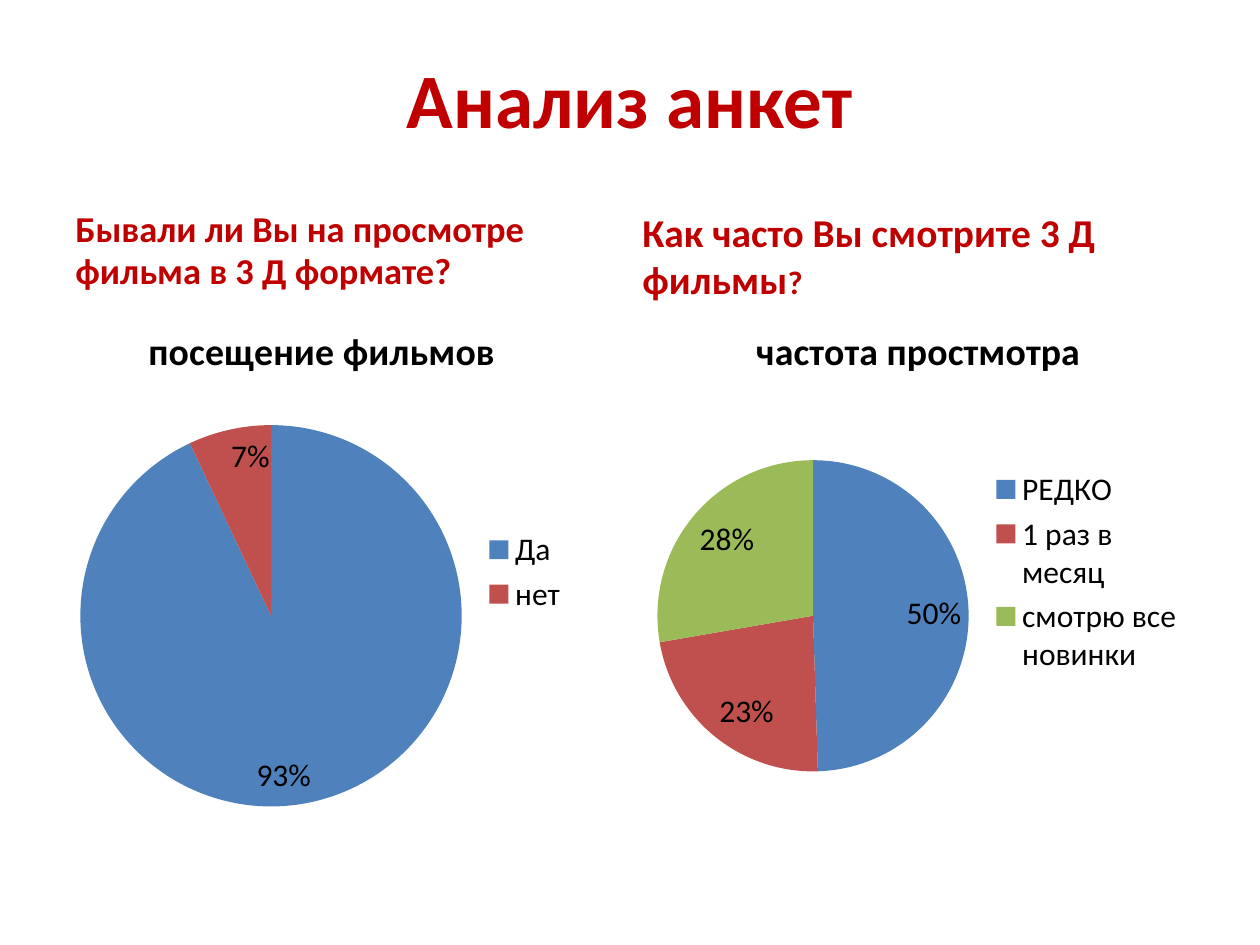
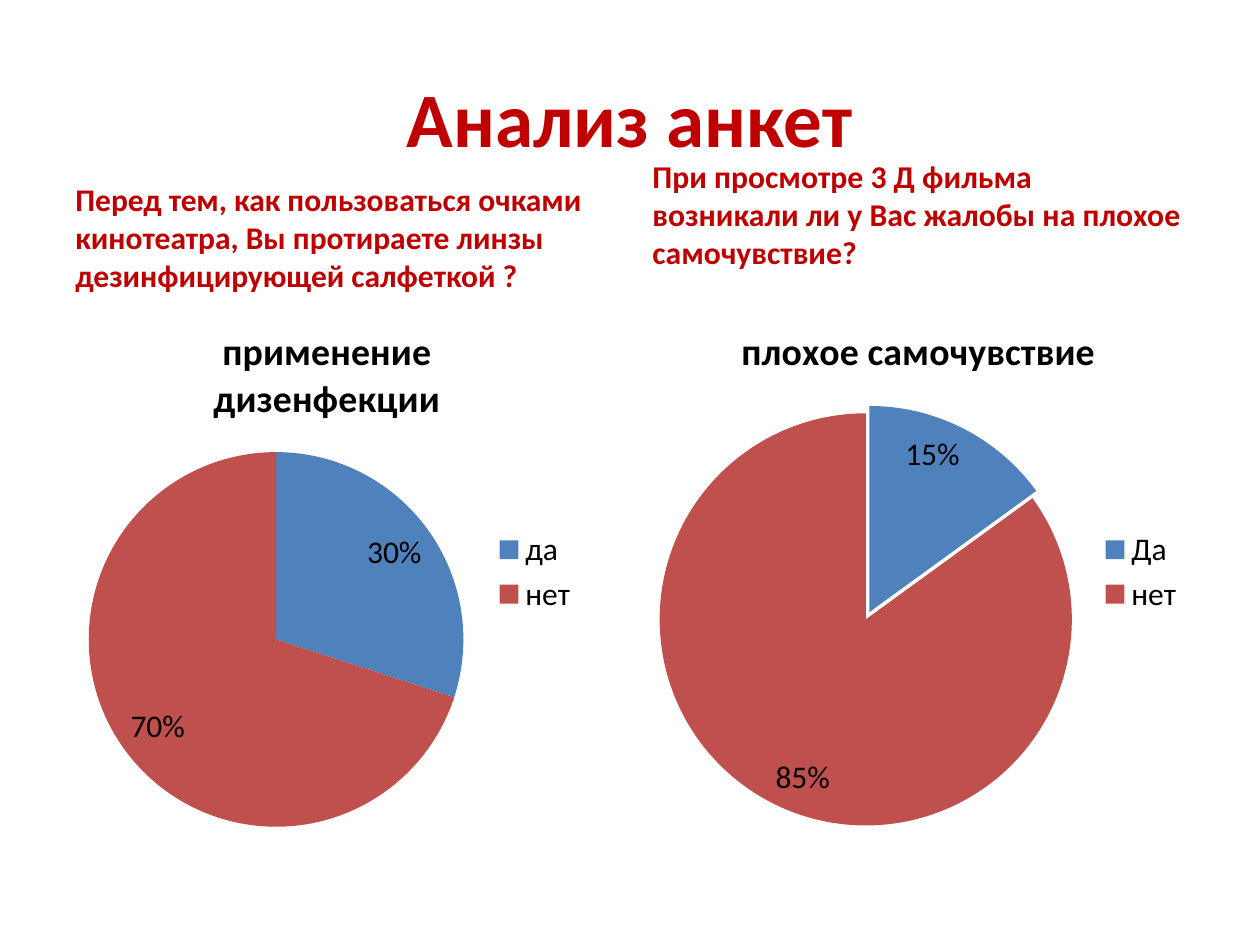
"""Build two slides that show questionnaire results as pairs of pie charts."""

from dataclasses import dataclass

from lxml.etree import SubElement
from pptx import Presentation
from pptx.chart.chart import Chart
from pptx.chart.data import CategoryChartData
from pptx.dml.color import RGBColor
from pptx.enum.chart import XL_CHART_TYPE, XL_LABEL_POSITION, XL_LEGEND_POSITION
from pptx.enum.text import MSO_ANCHOR, PP_ALIGN
from pptx.oxml.ns import qn
from pptx.presentation import Presentation as Deck
from pptx.slide import Slide
from pptx.text.text import Font, _Paragraph
from pptx.util import Inches, Length, Pt

COLUMNS, ROWS = 100, 75
WIDTH, HEIGHT = Inches(10), Inches(7.5)
LEFT, RIGHT = 5, 50.8


@dataclass(frozen=True)
class Theme:
    """Colours, typeface and type sizes of the deck."""

    font: str = "Calibri"
    accent: RGBColor = RGBColor(0xC0, 0x00, 0x00)
    ink: RGBColor = RGBColor(0x00, 0x00, 0x00)
    slices: tuple[RGBColor, ...] = (
        RGBColor(0x4F, 0x81, 0xBD),
        RGBColor(0xC0, 0x50, 0x4D),
        RGBColor(0x9B, 0xBB, 0x59),
    )
    title: float = 44
    chart_title: float = 21.6
    chart_text: float = 18


@dataclass(frozen=True)
class Area:
    """A rectangle measured in grid columns and rows."""

    left: float
    top: float
    width: float
    height: float

    def lengths(self) -> tuple[Length, Length, Length, Length]:
        """Return the left, top, width and height on the slide."""
        column, row = WIDTH / COLUMNS, HEIGHT / ROWS
        return (
            Length(round(self.left * column)),
            Length(round(self.top * row)),
            Length(round(self.width * column)),
            Length(round(self.height * row)),
        )


@dataclass(frozen=True)
class Span:
    """A piece of text with its own size."""

    text: str
    size: float


@dataclass(frozen=True)
class Question:
    """A question with its box and the space kept below the text."""

    area: Area
    spans: tuple[Span, ...]
    space_below: float = 0.05
    line_spacing: float = 1.0


@dataclass(frozen=True)
class Pie:
    """The answers to a question as a pie chart."""

    name: str
    answers: dict[str, float]
    left: float
    width: float
    explosion: int = 0


@dataclass(frozen=True)
class Survey:
    """One slide with questions and their charts."""

    title_height: float
    questions: tuple[Question, ...]
    pies: tuple[Pie, ...]


THEME = Theme()

SURVEYS = (
    Survey(
        9.5,
        (
            Question(
                Area(LEFT, 14.1, 44.2, 10.9),
                (Span("Бывали ли Вы на просмотре фильма в 3 Д формате?", 20.8),),
                0.18,
                0.95,
            ),
            Question(
                Area(50, 20.3, 45, 7),
                (Span("Как часто Вы смотрите 3 Д фильмы", 22.5), Span("?", 18.6)),
                0.33,
            ),
        ),
        (
            Pie("посещение фильмов", {"Да": 93, "нет": 7}, LEFT, 41.1),
            Pie(
                "частота простмотра",
                {"РЕДКО": 50, "1 раз в месяц": 23, "смотрю все новинки": 28},
                RIGHT,
                44.2,
            ),
        ),
    ),
    Survey(
        12.5,
        (
            Question(
                Area(LEFT, 16.8, 44.2, 7),
                (
                    Span(
                        "Перед тем, как пользоваться очками кинотеатра, "
                        "Вы протираете линзы дезинфицирующей салфеткой ?",
                        18,
                    ),
                ),
            ),
            Question(
                Area(RIGHT, 14.8, 44.2, 8.9),
                (
                    Span(
                        "При просмотре 3 Д фильма возникали ли у Вас "
                        "жалобы на плохое самочувствие?",
                        18.1,
                    ),
                ),
                0.22,
            ),
        ),
        (
            Pie("применение дизенфекции", {"да": 30, "нет": 70}, LEFT, 41.9),
            Pie("плохое самочувствие", {"Да": 15, "нет": 85}, RIGHT, 44.2, 2),
        ),
    ),
)


def style_font(font: Font, size: float, color: RGBColor, bold: bool) -> None:
    """Apply the deck's typeface with a size, colour and weight."""
    font.name = THEME.font
    font.size = Pt(size)
    font.color.rgb = color
    font.bold = bold


def add_span(paragraph: _Paragraph, span: Span, color: RGBColor) -> None:
    """Append a bold run to a paragraph."""
    run = paragraph.add_run()
    run.text = span.text
    style_font(run.font, span.size, color, True)


def set_title(page: Slide, height: float) -> None:
    """Place and fill the title placeholder."""
    title = page.shapes.title
    title.left, title.top, title.width, title.height = Area(5, 3, 90, height).lengths()
    title.text_frame.vertical_anchor = MSO_ANCHOR.MIDDLE
    paragraph = title.text_frame.paragraphs[0]
    paragraph.alignment = PP_ALIGN.CENTER
    add_span(paragraph, Span("Анализ анкет", THEME.title), THEME.accent)


def add_question(page: Slide, question: Question) -> None:
    """Draw a question that rests on the bottom of its box."""
    frame = page.shapes.add_textbox(*question.area.lengths()).text_frame
    frame.word_wrap = True
    frame.vertical_anchor = MSO_ANCHOR.BOTTOM
    frame.margin_bottom = Inches(question.space_below)
    paragraph = frame.paragraphs[0]
    paragraph.line_spacing = question.line_spacing
    for span in question.spans:
        add_span(paragraph, span, THEME.accent)


def style_slices(chart: Chart, pie: Pie) -> None:
    """Colour the slices, label them and pull them apart if asked."""
    plot = chart.plots[0]
    plot.vary_by_categories = True
    series = plot.series[0]
    if pie.explosion:
        explosion = SubElement(series._element, qn("c:explosion"))
        explosion.set("val", str(pie.explosion))
        series._element.find(qn("c:tx")).addnext(explosion)
    for index, color in zip(range(len(pie.answers)), THEME.slices):
        fill = series.points[index].format.fill
        fill.solid()
        fill.fore_color.rgb = color
    plot.has_data_labels = True
    labels = plot.data_labels
    labels.show_value = False
    labels.show_percentage = True
    labels.number_format = "0%"
    labels.number_format_is_linked = False
    labels.position = XL_LABEL_POSITION.INSIDE_END
    style_font(labels.font, THEME.chart_text, THEME.ink, False)


def add_pie(page: Slide, pie: Pie) -> None:
    """Draw a pie chart with a title and a legend on the right."""
    data = CategoryChartData()
    data.categories = list(pie.answers)
    data.add_series(pie.name, list(pie.answers.values()))
    area = Area(pie.left, 23.8, pie.width, 43.2)
    chart = page.shapes.add_chart(XL_CHART_TYPE.PIE, *area.lengths(), data).chart
    style_font(chart.font, THEME.chart_text, THEME.ink, False)
    chart.has_title = True
    chart.chart_title.include_in_layout = False
    add_span(
        chart.chart_title.text_frame.paragraphs[0],
        Span(pie.name, THEME.chart_title),
        THEME.ink,
    )
    chart.has_legend = True
    chart.legend.position = XL_LEGEND_POSITION.RIGHT
    chart.legend.include_in_layout = False
    style_font(chart.legend.font, THEME.chart_text, THEME.ink, False)
    style_slices(chart, pie)


def add_survey(deck: Deck, survey: Survey) -> None:
    """Add a slide with a title, its questions and its charts."""
    page = deck.slides.add_slide(deck.slide_layouts.get_by_name("Title Only"))
    set_title(page, survey.title_height)
    for question in survey.questions:
        add_question(page, question)
    for pie in survey.pies:
        add_pie(page, pie)


def main() -> None:
    """Build the deck and save it."""
    deck = Presentation()
    deck.slide_width, deck.slide_height = WIDTH, HEIGHT
    for survey in SURVEYS:
        add_survey(deck, survey)
    deck.save("out.pptx")


if __name__ == "__main__":
    main()
